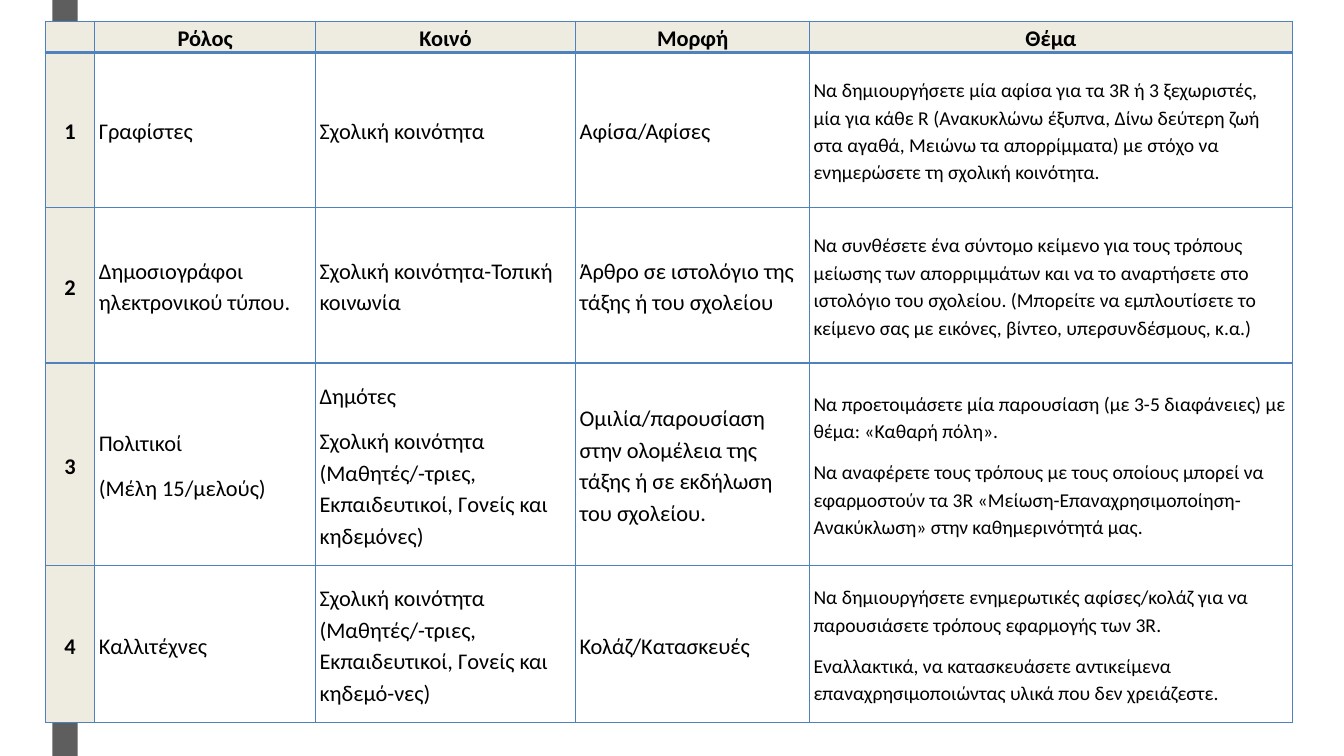
import pptx
import pptx.dml.color
import pptx.enum.shapes
import pptx.enum.text
import pptx.oxml
import pptx.oxml.ns
import pptx.util

Inches = pptx.util.Inches
Pt = pptx.util.Pt
RGBColor = pptx.dml.color.RGBColor
ALIGN = pptx.enum.text.PP_ALIGN

HEADERS = ["", "Ρόλος", "Κοινό", "Μορφή", "Θέμα"]
GROUPS = [
    (["Γραφίστες"],
     ["Σχολική κοινότητα"],
     ["Αφίσα/Αφίσες"],
     ["Να δημιουργήσετε μία αφίσα για τα 3R ή 3 ξεχωριστές, μία για κάθε R "
      "(Ανακυκλώνω έξυπνα, Δίνω δεύτερη ζωή στα αγαθά, Μειώνω τα απορρίμματα) "
      "με στόχο να ενημερώσετε τη σχολική κοινότητα."]),
    (["Δημοσιογράφοι ηλεκτρονικού τύπου."],
     ["Σχολική κοινότητα-Τοπική κοινωνία"],
     ["Άρθρο σε ιστολόγιο της τάξης ή του σχολείου"],
     ["Να συνθέσετε ένα σύντομο κείμενο για τους τρόπους μείωσης των απορριμμάτων "
      "και να το αναρτήσετε στο ιστολόγιο του σχολείου. (Μπορείτε να εμπλουτίσετε "
      "το κείμενο σας με εικόνες, βίντεο, υπερσυνδέσμους, κ.α.)"]),
    (["Πολιτικοί", "(Μέλη 15/μελούς)"],
     ["Δημότες",
      "Σχολική κοινότητα (Μαθητές/-τριες, Εκπαιδευτικοί, Γονείς και κηδεμόνες)"],
     ["Ομιλία/παρουσίαση στην ολομέλεια της τάξης ή σε εκδήλωση του σχολείου."],
     ["Να προετοιμάσετε μία παρουσίαση (με 3-5 διαφάνειες) με θέμα: «Καθαρή πόλη».",
      "Να αναφέρετε τους τρόπους με τους οποίους μπορεί να εφαρμοστούν τα 3R "
      "«Μείωση-Επαναχρησιμοποίηση-Ανακύκλωση» στην καθημερινότητά μας."]),
    (["Καλλιτέχνες"],
     ["Σχολική κοινότητα (Μαθητές/-τριες, Εκπαιδευτικοί, Γονείς και κηδεμό-νες)"],
     ["Κολάζ/Κατασκευές"],
     ["Να δημιουργήσετε ενημερωτικές αφίσες/κολάζ για να παρουσιάσετε τρόπους "
      "εφαρμογής των 3R.",
      "Εναλλακτικά, να κατασκευάσετε αντικείμενα επαναχρησιμοποιώντας υλικά που "
      "δεν χρειάζεστε."]),
]
COLUMN_WIDTHS = [0.49, 2.19, 2.58, 2.32, 4.79]
ROW_HEIGHTS = [0.31, 1.54, 1.54, 2.01, 1.56]
TABLE_LEFT, TABLE_TOP = 0.45, 0.21
THEME_COLUMN = len(HEADERS) - 1

STRIPE = RGBColor(0x5E, 0x5E, 0x5E)
HEADING_FILL = RGBColor(0xEE, 0xEC, 0xE1)
BORDER = RGBColor(0x4F, 0x81, 0xBD)
INK = RGBColor(0, 0, 0)


def add_borders(cell, row):
    widths = {"L": 1, "R": 1, "T": 2.25 if row == 1 else 1, "B": 2.25 if row == 0 else 1}
    properties = cell._tc.get_or_add_tcPr()
    for position, (side, width) in enumerate(widths.items()):
        properties.insert(position, pptx.oxml.parse_xml(
            f'<a:ln{side} {pptx.oxml.ns.nsdecls("a")} w="{Pt(width)}">'
            f'<a:solidFill><a:srgbClr val="{BORDER}"/></a:solidFill></a:ln{side}>'))


def fill_cell(cell, row, column, paragraphs):
    heading = row == 0 or column == 0
    cell.vertical_anchor = pptx.enum.text.MSO_ANCHOR.MIDDLE
    cell.margin_left = cell.margin_right = Inches(0.04)
    cell.margin_top = cell.margin_bottom = 0
    if heading:
        cell.fill.solid()
        cell.fill.fore_color.rgb = HEADING_FILL
    else:
        cell.fill.background()
    add_borders(cell, row)
    for index, text in enumerate(paragraphs):
        frame = cell.text_frame
        paragraph = frame.add_paragraph() if index else frame.paragraphs[0]
        paragraph.line_spacing = 1.15
        paragraph.space_after = Pt(10)
        if heading:
            paragraph.alignment = ALIGN.CENTER
        else:
            paragraph.alignment = ALIGN.JUSTIFY if column == 1 else ALIGN.LEFT
        if not text:
            continue
        run = paragraph.add_run()
        run.text = text
        run.font.name = "Calibri"
        run.font.size = Pt(14 if column == THEME_COLUMN and not heading else 16)
        run.font.bold = heading
        run.font.color.rgb = INK


def main():
    deck = pptx.Presentation()
    deck.slide_width, deck.slide_height = Inches(13.33), Inches(7.5)
    slide = deck.slides.add_slide(deck.slide_layouts[6])

    stripe = slide.shapes.add_shape(
        pptx.enum.shapes.MSO_SHAPE.RECTANGLE,
        Inches(0.52), 0, Inches(0.25), deck.slide_height)
    stripe.shadow.inherit = False
    stripe.fill.solid()
    stripe.fill.fore_color.rgb = STRIPE
    stripe.line.fill.background()

    rows = [[[header] for header in HEADERS]]
    rows += [[[str(number)], *group] for number, group in enumerate(GROUPS, 1)]
    roles = slide.shapes.add_table(
        len(rows), len(HEADERS), Inches(TABLE_LEFT), Inches(TABLE_TOP),
        Inches(sum(COLUMN_WIDTHS)), Inches(sum(ROW_HEIGHTS))).table
    roles.horz_banding = False
    for column, width in zip(roles.columns, COLUMN_WIDTHS):
        column.width = Inches(width)
    for row, height in zip(roles.rows, ROW_HEIGHTS):
        row.height = Inches(height)
    for row, contents in enumerate(rows):
        for column, paragraphs in enumerate(contents):
            fill_cell(roles.cell(row, column), row, column, paragraphs)

    deck.save("out.pptx")


if __name__ == "__main__":
    main()
